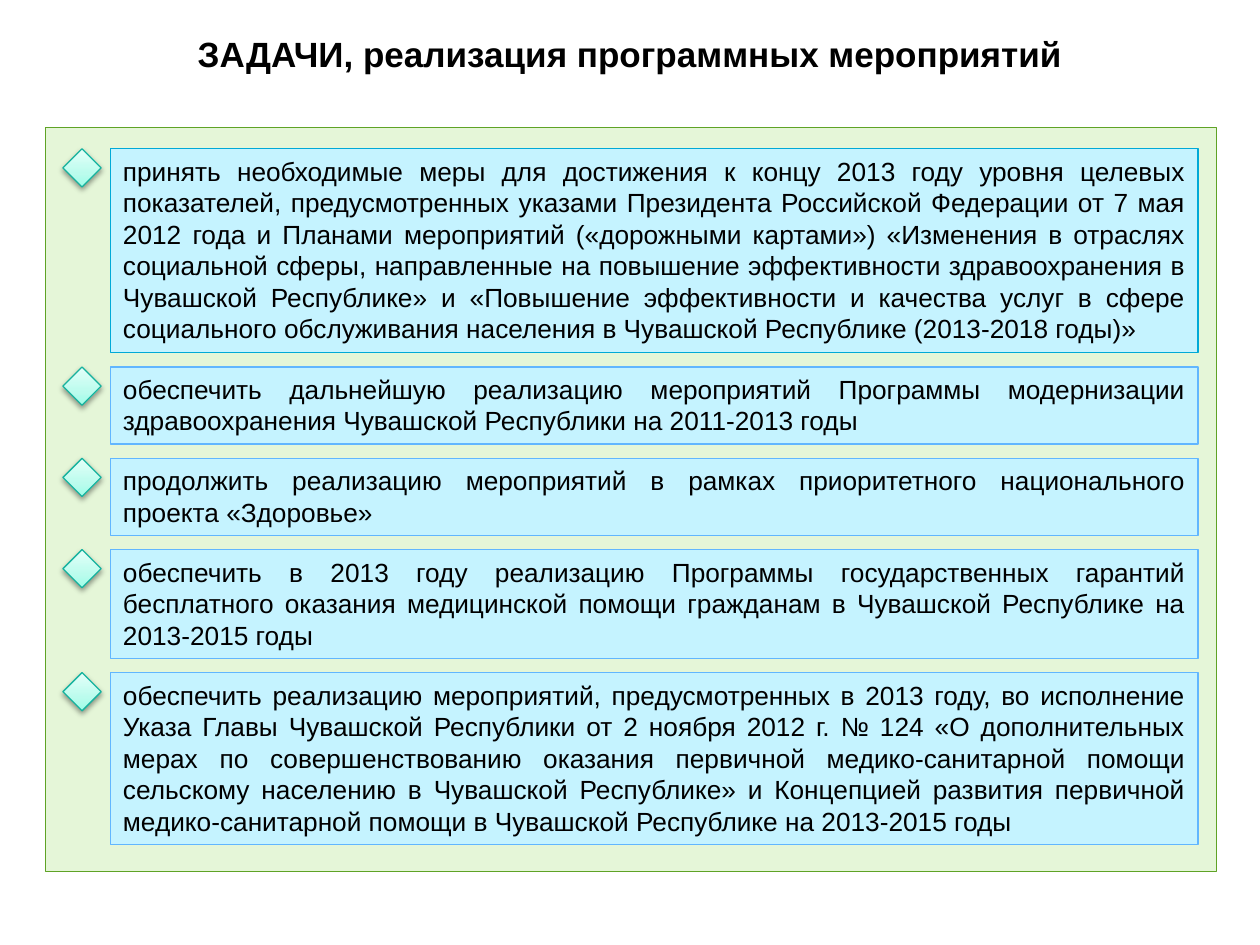
from copy import deepcopy

from lxml.etree import SubElement
from pptx import Presentation
from pptx.dml.color import RGBColor
from pptx.enum.shapes import MSO_SHAPE
from pptx.enum.text import MSO_ANCHOR, PP_ALIGN
from pptx.oxml.ns import qn
from pptx.util import Cm, Pt

# Content: text and number of lines it takes
TITLE = "ЗАДАЧИ, реализация программных мероприятий"
TASKS = [
    ("принять необходимые меры для достижения к концу 2013 году уровня целевых "
     "показателей, предусмотренных указами Президента Российской Федерации от 7 мая "
     "2012 года и Планами мероприятий («дорожными картами») «Изменения в отраслях "
     "социальной сферы, направленные на повышение эффективности здравоохранения в "
     "Чувашской Республике» и «Повышение эффективности и качества услуг в сфере "
     "социального обслуживания населения в Чувашской Республике (2013-2018 годы)»", 6),
    ("обеспечить дальнейшую реализацию мероприятий Программы модернизации "
     "здравоохранения Чувашской Республики на 2011-2013 годы", 2),
    ("продолжить реализацию мероприятий в рамках приоритетного национального "
     "проекта «Здоровье»", 2),
    ("обеспечить в 2013 году реализацию Программы государственных гарантий "
     "бесплатного оказания медицинской помощи гражданам в Чувашской Республике на "
     "2013-2015 годы", 3),
    ("обеспечить реализацию мероприятий, предусмотренных в 2013 году, во исполнение "
     "Указа Главы Чувашской Республики от 2 ноября 2012 г. № 124 «О дополнительных "
     "мерах по совершенствованию оказания первичной медико-санитарной помощи "
     "сельскому населению в Чувашской Республике» и Концепцией развития первичной "
     "медико-санитарной помощи в Чувашской Республике на 2013-2015 годы", 5),
]


class Theme:
    text = RGBColor.from_string("000000")
    panel, panel_line = "E5F6D8", "5FA326"
    task, first_task_line, task_line = "C5F3FF", "00A9D7", "61B6FF"
    marker_line = "16B39E"
    marker_stops = [(0, "9DFDE8"), (0.35, "BBFCED"), (1, "E4FFF9")]
    title_font = {"name": "Arial", "size": Pt(20), "bold": True, "color": text}
    task_font = {"name": "Arial", "size": Pt(15), "bold": False, "color": text}


# Layout in centimetres
TASK_LEFT, TASK_WIDTH, TASK_TOP = 2.23, 21.92, 3.0
LINE_HEIGHT, TASK_PADDING, TASK_GAP = 0.64, 0.27, 0.29
MARKER_LEFT, MARKER_SIZE = 1.27, 0.77


def add_box(slide, kind, place, fill, line, line_width=0.75):
    shape = slide.shapes.add_shape(kind, *map(Cm, place))
    shape.shadow.inherit = False
    if fill:
        shape.fill.solid()
        shape.fill.fore_color.rgb = RGBColor.from_string(fill)
    shape.line.color.rgb = RGBColor.from_string(line)
    shape.line.width = Pt(line_width)
    return shape


def write(shape, text, alignment, font_values, frame_values):
    frame = shape.text_frame
    for name, value in frame_values.items():
        setattr(frame, name, value)
    paragraph = frame.paragraphs[0]
    paragraph.alignment = alignment
    run = paragraph.add_run()
    run.text = text
    for name, value in font_values.items():
        if name == "color":
            run.font.color.rgb = value
        else:
            setattr(run.font, name, value)


def add_marker(slide, top):
    place = (MARKER_LEFT, top, MARKER_SIZE, MARKER_SIZE)
    shape = add_box(slide, MSO_SHAPE.DIAMOND, place, None, Theme.marker_line)
    # Three-stop gradient, running upwards
    shape.fill.gradient()
    shape.fill.gradient_angle = 90
    properties = shape.element.spPr
    stop_list = properties.find(".//" + qn("a:gsLst"))
    stop_list.append(deepcopy(stop_list[-1]))
    for stop, (position, color) in zip(shape.fill.gradient_stops, Theme.marker_stops):
        stop.position = position
        stop.color.rgb = RGBColor.from_string(color)
    # Soft shadow below
    shadow = SubElement(properties.find(qn("a:effectLst")), qn("a:outerShdw"),
                        blurRad=str(Pt(3.1)), dist=str(Pt(1.6)),
                        dir="5400000", rotWithShape="0")
    color = SubElement(shadow, qn("a:srgbClr"), val="000000")
    SubElement(color, qn("a:alpha"), val="38000")


def main():
    presentation = Presentation()
    presentation.slide_width, presentation.slide_height = Cm(25.4), Cm(19.05)
    slide = presentation.slides.add_slide(presentation.slide_layouts[6])

    # Background panel
    add_box(slide, MSO_SHAPE.RECTANGLE, (0.91, 2.57, 23.62, 14.99),
            Theme.panel, Theme.panel_line, 0.5)

    # Title
    title = slide.shapes.add_textbox(Cm(1.27), Cm(0.53), Cm(22.86), Cm(1.55))
    write(title, TITLE, PP_ALIGN.CENTER, Theme.title_font,
          {"word_wrap": True, "margin_left": Cm(0.1), "margin_right": Cm(0.1)})

    # Tasks, stacked by their line counts, each with a marker
    top = TASK_TOP
    for index, (text, lines) in enumerate(TASKS):
        height = lines * LINE_HEIGHT + TASK_PADDING
        line = Theme.task_line if index else Theme.first_task_line
        shape = add_box(slide, MSO_SHAPE.RECTANGLE,
                        (TASK_LEFT, top, TASK_WIDTH, height), Theme.task, line)
        write(shape, text, PP_ALIGN.JUSTIFY, Theme.task_font,
              {"word_wrap": True, "vertical_anchor": MSO_ANCHOR.TOP})
        add_marker(slide, top)
        top += height + TASK_GAP

    presentation.save("out.pptx")


if __name__ == "__main__":
    main()
